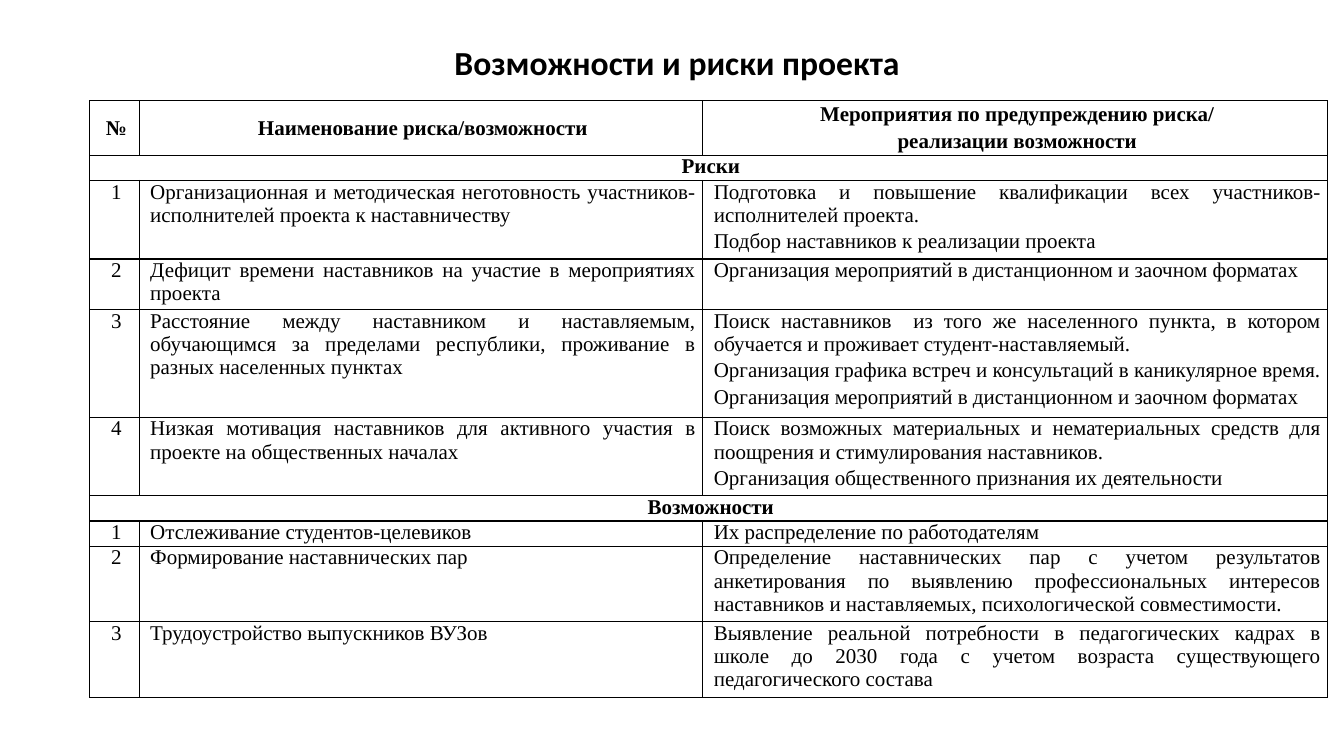
"""Build the slide with the table of project risks and opportunities."""
from dataclasses import dataclass

import lxml.etree
import pptx
import pptx.dml.color
import pptx.enum.text
import pptx.oxml.ns
import pptx.presentation
import pptx.slide
import pptx.table
import pptx.text.text
import pptx.util

SLIDE_WIDTH = pptx.util.Inches(13.33)
SLIDE_HEIGHT = pptx.util.Inches(7.5)
GRID_COLUMNS, GRID_ROWS = 1333, 750
COLORS = {"text": "000000", "border": "000000", "cell": "FFFFFF"}
TITLE_FONT, TABLE_FONT = "Calibri", "Times New Roman"
COLUMN_SPANS = (49, 559, 620)
ALIGN = pptx.enum.text.PP_ALIGN
ANCHOR = pptx.enum.text.MSO_ANCHOR


@dataclass(frozen=True)
class Area:
    left: int
    top: int
    width: int
    height: int


@dataclass(frozen=True)
class Header:
    height: int
    labels: tuple[str, ...]


@dataclass(frozen=True)
class Section:
    height: int
    name: str


@dataclass(frozen=True)
class Entry:
    height: int
    number: int
    name: str
    measures: str


TABLE_ROWS = (
    Header(54, ("№", "Наименование риска/возможности",
                "Мероприятия по предупреждению риска/\nреализации возможности")),
    Section(25, "Риски"),
    Entry(78, 1, "Организационная и методическая неготовность участников-исполнителей проекта к наставничеству",
          "Подготовка и повышение квалификации всех участников-исполнителей проекта.\n"
          "Подбор наставников к реализации проекта"),
    Entry(50, 2, "Дефицит времени наставников на участие в мероприятиях проекта",
          "Организация мероприятий в дистанционном и заочном форматах"),
    Entry(107, 3, "Расстояние между наставником и наставляемым, обучающимся за пределами республики, "
          "проживание в разных населенных пунктах",
          "Поиск наставников  из того же населенного пункта, в котором обучается и проживает студент-наставляемый.\n"
          "Организация графика встреч и консультаций в каникулярное время.\n"
          "Организация мероприятий в дистанционном и заочном форматах"),
    Entry(78, 4, "Низкая мотивация наставников для активного участия в проекте на общественных началах",
          "Поиск возможных материальных и нематериальных средств для поощрения и стимулирования наставников.\n"
          "Организация общественного признания их деятельности"),
    Section(25, "Возможности"),
    Entry(25, 1, "Отслеживание студентов-целевиков", "Их распределение по работодателям"),
    Entry(75, 2, "Формирование наставнических пар",
          "Определение наставнических пар с учетом результатов анкетирования по выявлению профессиональных "
          "интересов наставников и наставляемых, психологической совместимости."),
    Entry(75, 3, "Трудоустройство выпускников ВУЗов",
          "Выявление реальной потребности в педагогических кадрах в школе до 2030 года с учетом возраста "
          "существующего педагогического состава"),
)
TITLE_AREA = Area(382, 37, 579, 50)
TABLE_AREA = Area(89, 100, sum(COLUMN_SPANS), sum(content.height for content in TABLE_ROWS))


def columns(count: int) -> int:
    return round(SLIDE_WIDTH * count / GRID_COLUMNS)


def rows(count: int) -> int:
    return round(SLIDE_HEIGHT * count / GRID_ROWS)


def place(area: Area) -> tuple[int, int, int, int]:
    return columns(area.left), rows(area.top), columns(area.width), rows(area.height)


def add_run(paragraph: pptx.text.text._Paragraph, text: str, font: str, size: int, bold: bool) -> None:
    run = paragraph.add_run()
    run.text = text
    run.font.name = font
    run.font.size = pptx.util.Pt(size)
    run.font.bold = bold
    run.font.color.rgb = pptx.dml.color.RGBColor.from_string(COLORS["text"])


def add_borders(cell: pptx.table._Cell) -> None:
    properties = cell._tc.get_or_add_tcPr()
    qn = pptx.oxml.ns.qn
    for side in ("a:lnL", "a:lnR", "a:lnT", "a:lnB"):
        line = lxml.etree.SubElement(properties, qn(side), w=str(pptx.util.Pt(1)))
        fill = lxml.etree.SubElement(line, qn("a:solidFill"))
        lxml.etree.SubElement(fill, qn("a:srgbClr"), val=COLORS["border"])


def style_cell(cell: pptx.table._Cell, filled: bool) -> None:
    cell.margin_left = cell.margin_right = columns(7)
    cell.margin_top = cell.margin_bottom = 0
    add_borders(cell)
    if filled:
        cell.fill.solid()
        cell.fill.fore_color.rgb = pptx.dml.color.RGBColor.from_string(COLORS["cell"])
    else:
        cell.fill.background()


def write_cell(cell: pptx.table._Cell, text: str, align: ALIGN, bold: bool = False) -> None:
    for index, line in enumerate(text.split("\n")):
        frame = cell.text_frame
        paragraph = frame.add_paragraph() if index else frame.paragraphs[0]
        paragraph.alignment = align
        paragraph.space_after = pptx.util.Pt(2.4)
        paragraph._p.get_or_add_pPr().set("marL", str(columns(4)))
        add_run(paragraph, line, TABLE_FONT, 15, bold)


def fill_row(cells: list[pptx.table._Cell], content: Header | Section | Entry) -> None:
    for index, cell in enumerate(cells):
        style_cell(cell, isinstance(content, Entry) and index > 0)
    if isinstance(content, Header):
        for cell, label in zip(cells, content.labels):
            cell.vertical_anchor = ANCHOR.MIDDLE
            write_cell(cell, label, ALIGN.CENTER, bold=True)
    elif isinstance(content, Section):
        cells[0].merge(cells[-1])
        write_cell(cells[0], content.name, ALIGN.CENTER, bold=True)
    else:
        write_cell(cells[0], str(content.number), ALIGN.CENTER)
        write_cell(cells[1], content.name, ALIGN.JUSTIFY)
        write_cell(cells[2], content.measures, ALIGN.JUSTIFY)


def add_title(slide: pptx.slide.Slide) -> None:
    frame = slide.shapes.add_textbox(*place(TITLE_AREA)).text_frame
    frame.word_wrap = True
    frame.auto_size = pptx.enum.text.MSO_AUTO_SIZE.SHAPE_TO_FIT_TEXT
    paragraph = frame.paragraphs[0]
    paragraph.alignment = ALIGN.CENTER
    add_run(paragraph, "Возможности и риски проекта", TITLE_FONT, 24, True)


def add_risk_table(slide: pptx.slide.Slide) -> None:
    shape = slide.shapes.add_table(len(TABLE_ROWS), len(COLUMN_SPANS), *place(TABLE_AREA))
    table = shape.table
    table.first_row = table.horz_banding = False
    for column, span in zip(table.columns, COLUMN_SPANS):
        column.width = columns(span)
    for row, content in zip(table.rows, TABLE_ROWS):
        row.height = rows(content.height)
        fill_row(list(row.cells), content)


def main() -> None:
    presentation = pptx.Presentation()
    presentation.slide_width = SLIDE_WIDTH
    presentation.slide_height = SLIDE_HEIGHT
    slide = presentation.slides.add_slide(presentation.slide_layouts[6])
    add_risk_table(slide)
    add_title(slide)
    presentation.save("out.pptx")


if __name__ == "__main__":
    main()
